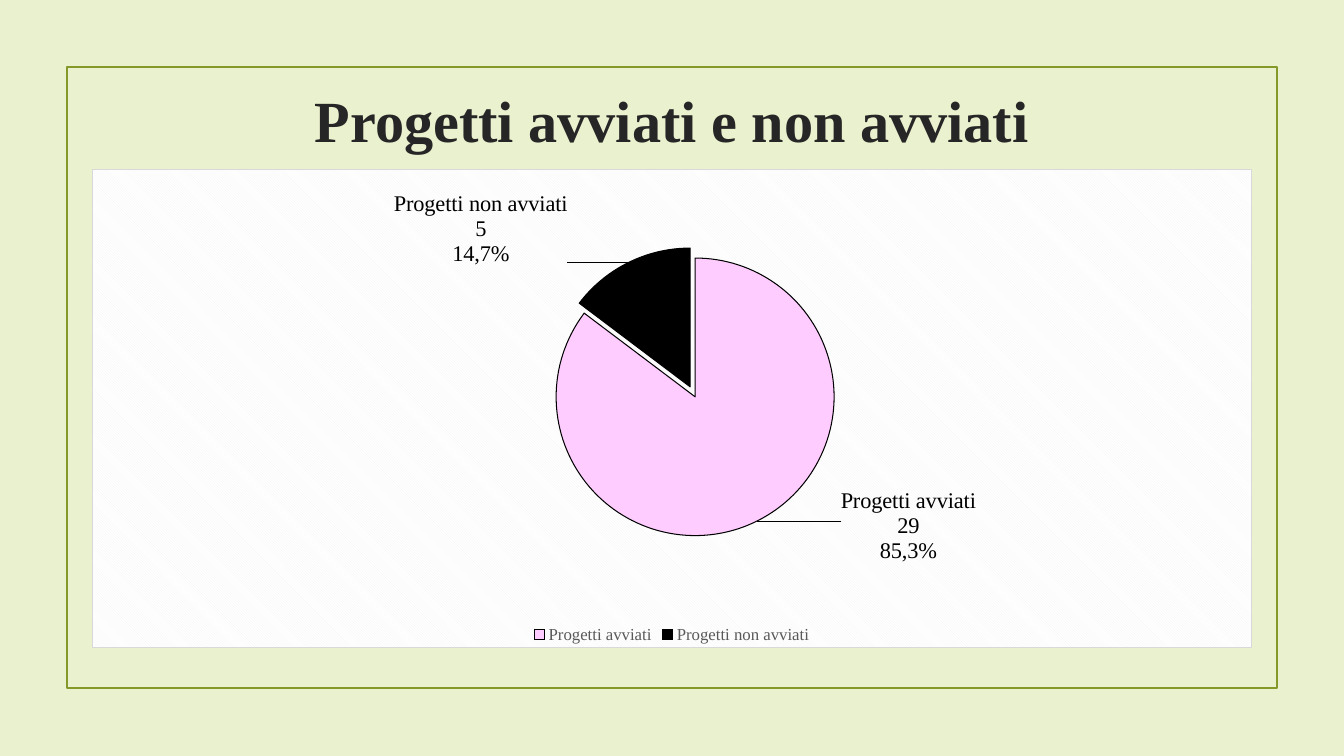
import pptx
import pptx.chart.data
import pptx.dml.color
import pptx.enum.chart
import pptx.enum.shapes
import pptx.enum.text
import pptx.oxml
import pptx.oxml.ns
import pptx.util

Pt = pptx.util.Pt
RGB = pptx.dml.color.RGBColor
GREEN = RGB(0x83, 0x99, 0x2A)
PALE = RGB(0xEA, 0xF1, 0xCE)
DARK = RGB(0x26, 0x26, 0x26)
GREY = RGB(0x59, 0x59, 0x59)
PINK = RGB(0xFF, 0xCC, 0xFF)
BLACK = RGB(0, 0, 0)

NS = pptx.oxml.ns.nsdecls("c", "a")
AREA = f"""<c:spPr {NS}>
<a:pattFill prst="ltDnDiag"><a:fgClr><a:srgbClr val="F2F2F2"/></a:fgClr>
<a:bgClr><a:srgbClr val="FFFFFF"/></a:bgClr></a:pattFill>
<a:ln w="9525"><a:solidFill><a:srgbClr val="D9D9D9"/></a:solidFill></a:ln>
</c:spPr>"""


def layout(inner=False, **vals):
    """Return a manual chart layout with the given fractions."""
    head = ""
    if inner:
        head = ('<c:layoutTarget val="inner"/><c:xMode val="edge"/>'
                '<c:yMode val="edge"/>')
    body = "".join(f'<c:{key} val="{val}"/>' for key, val in vals.items())
    return pptx.oxml.parse_xml(
        f"<c:layout {NS}><c:manualLayout>{head}{body}</c:manualLayout></c:layout>")


class Deck:
    def __init__(self):
        self.prs = pptx.Presentation()
        self.prs.slide_width, self.prs.slide_height = Pt(960), Pt(540)
        self.face = "Times New Roman"
        self.slide = self.prs.slides.add_slide(self.prs.slide_layouts[6])
        fill = self.slide.background.fill
        fill.solid()
        fill.fore_color.rgb = PALE

    def style(self, font, size, color, bold=False):
        for key, val in {"name": self.face, "size": Pt(size), "bold": bold}.items():
            setattr(font, key, val)
        font.color.rgb = color

    def frame(self, *box):
        kind = pptx.enum.shapes.MSO_SHAPE.RECTANGLE
        rect = self.slide.shapes.add_shape(kind, *map(Pt, box))
        rect.shadow.inherit = False
        rect.fill.background()
        rect.line.color.rgb = GREEN
        rect.line.width = Pt(1.25)

    def title(self, text, *box):
        area = self.slide.shapes.add_textbox(*map(Pt, box)).text_frame
        area.word_wrap = True
        area.vertical_anchor = pptx.enum.text.MSO_ANCHOR.MIDDLE
        para = area.paragraphs[0]
        para.alignment = pptx.enum.text.PP_ALIGN.CENTER
        para.line_spacing = 0.9
        run = para.add_run()
        run.text = text
        self.style(run.font, 41.6, DARK, True)

    def label(self, point, text, x, y):
        """Write a slice label, moved from its usual place by x and y."""
        mark = point.data_label
        mark.position = pptx.enum.chart.XL_LABEL_POSITION.OUTSIDE_END
        mark.text_frame.text = text
        for para in mark.text_frame.paragraphs:
            for run in para.runs:
                self.style(run.font, 16, BLACK)
        item = mark.text_frame._txBody.getparent().getparent()
        item.insert(1, layout(x=x, y=y))

    def pie(self, rows, *box):
        """Draw a pie from rows of name, value, share, colour, burst, x, y."""
        data = pptx.chart.data.CategoryChartData()
        data.categories = [row[0] for row in rows]
        data.add_series("Series 1", [row[1] for row in rows])
        kind = pptx.enum.chart.XL_CHART_TYPE.PIE
        chart = self.slide.shapes.add_chart(kind, *map(Pt, box), data).chart
        chart.has_title = False
        self.style(chart.font, 10, BLACK)
        chart.has_legend = True
        chart.legend.position = pptx.enum.chart.XL_LEGEND_POSITION.BOTTOM
        chart.legend.include_in_layout = False
        self.style(chart.legend.font, 12, GREY)

        plot = chart.plots[0]
        plot.vary_by_categories = True
        series = plot.series[0]
        series.data_labels.show_value = True
        for i, (name, val, share, color, burst, x, y) in enumerate(rows):
            point = series.points[i]
            point.format.fill.solid()
            point.format.fill.fore_color.rgb = color
            point.format.line.color.rgb = BLACK
            point.format.line.width = Pt(0.75)
            if burst:
                shift = pptx.oxml.parse_xml(f'<c:explosion {NS} val="{burst}"/>')
                slot = series._element.findall(pptx.oxml.ns.qn("c:dPt"))[i]
                slot.find(pptx.oxml.ns.qn("c:spPr")).addprevious(shift)
            self.label(point, f"{name}\n{val}\n{share}", x, y)

        root = chart.element
        root.find(pptx.oxml.ns.qn("c:chart")).addnext(pptx.oxml.parse_xml(AREA))
        area = root.find(".//" + pptx.oxml.ns.qn("c:plotArea"))
        for old in area.findall(pptx.oxml.ns.qn("c:layout")):
            area.remove(old)
        area.insert(0, layout(True, x=0.4, y=0.18, w=0.24, h=0.59))


def main():
    deck = Deck()
    deck.frame(48, 48, 864, 443.5)
    deck.title("Progetti avviati e non avviati", 102, 60, 756, 57)
    deck.pie([
        ("Progetti avviati", 29, "85,3%", PINK, 0, 0.07, -0.08),
        ("Progetti non avviati", 5, "14,7%", BLACK, 8, -0.05, 0.02),
    ], 66, 121, 828, 342)
    deck.prs.save("out.pptx")


if __name__ == "__main__":
    main()
